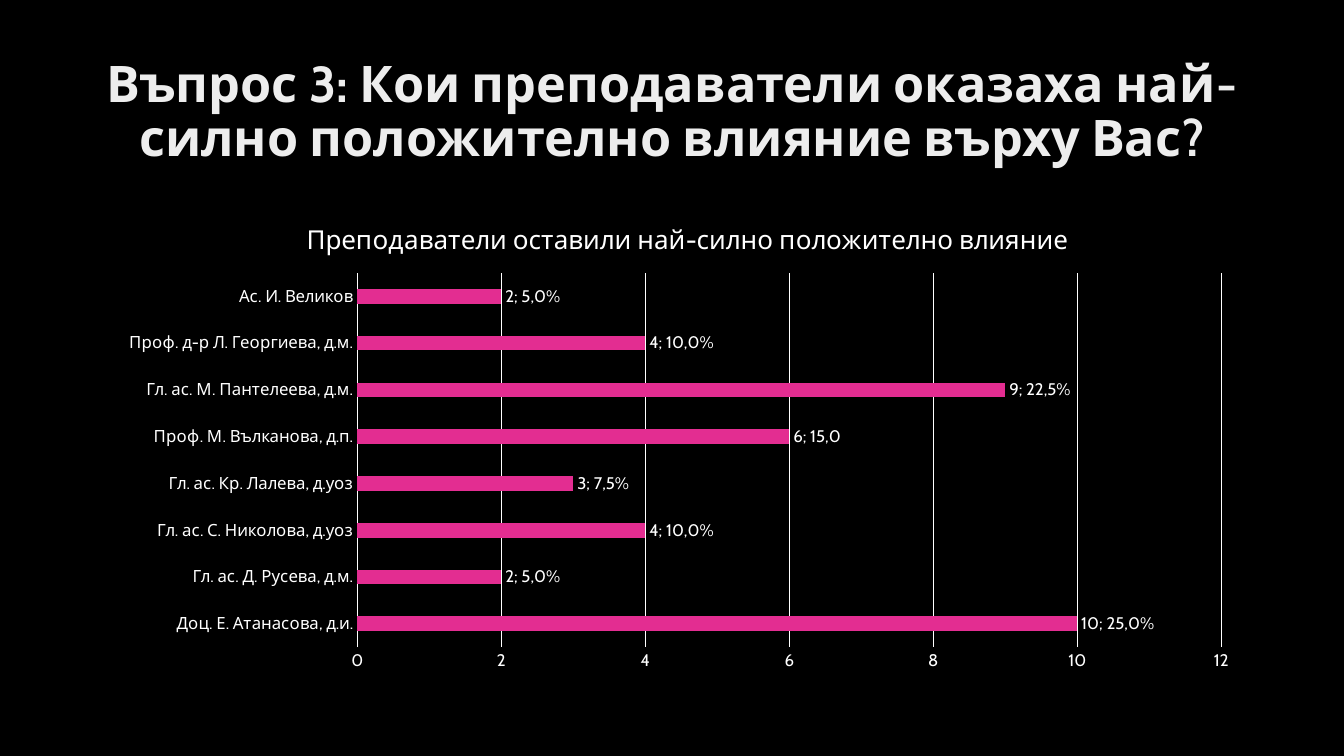
import pptx
import pptx.chart.data
import pptx.dml.color
import pptx.enum.chart
import pptx.enum.text
import pptx.oxml
import pptx.oxml.ns
import pptx.util

Pt = pptx.util.Pt
TEACHERS = [
    ("Доц. Е. Атанасова, д.и.", 10, "10; 25,0%"),
    ("Гл. ас. Д. Русева, д.м.", 2, "2; 5,0%"),
    ("Гл. ас. С. Николова, д.уоз", 4, "4; 10,0%"),
    ("Гл. ас. Кр. Лалева, д.уоз", 3, "3; 7,5%"),
    ("Проф. М. Вълканова, д.п.", 6, "6; 15,0"),
    ("Гл. ас. М. Пантелеева, д.м.", 9, "9; 22,5%"),
    ("Проф. д-р Л. Георгиева, д.м.", 4, "4; 10,0%"),
    ("Ас. И. Великов", 2, "2; 5,0%"),
]


def rgb(value):
    return pptx.dml.color.RGBColor.from_string(value)


def set_plot_layout(chart, **fractions):
    """Place the inner plot area by fractions x, y, w, h of the chart."""
    plot_area = chart._chartSpace.chart.plotArea
    for old in plot_area.findall(pptx.oxml.ns.qn("c:layout")):
        plot_area.remove(old)
    sizes = "".join(f'<c:{k} val="{v}"/>' for k, v in fractions.items())
    plot_area.insert(0, pptx.oxml.parse_xml(
        f'<c:layout {pptx.oxml.ns.nsdecls("c")}><c:manualLayout>'
        '<c:layoutTarget val="inner"/><c:xMode val="edge"/><c:yMode val="edge"/>'
        f'{sizes}</c:manualLayout></c:layout>'))


class Deck:
    FONT = "Cabin"
    BACK, TEXT, HEADING, BAR = "000000", "FFFFFF", "EDEDED", "E32D91"

    def __init__(self, width, height):
        self.prs = pptx.Presentation()
        self.prs.slide_width, self.prs.slide_height = Pt(width), Pt(height)
        self.s = self.prs.slides.add_slide(self.prs.slide_layouts[6])
        fill = self.s.background.fill
        fill.solid()
        fill.fore_color.rgb = rgb(self.BACK)

    def style(self, font, size, color=TEXT, bold=False):
        font.name, font.size, font.bold = self.FONT, Pt(size), bold
        font.color.rgb = rgb(color)

    def heading(self, text, x, y, w, h):
        sp = self.s.shapes.add_textbox(Pt(x), Pt(y), Pt(w), Pt(h))
        tf = sp.text_frame
        tf.word_wrap = True
        tf.vertical_anchor = pptx.enum.text.MSO_ANCHOR.MIDDLE
        tf.text = text
        p = tf.paragraphs[0]
        p.alignment = pptx.enum.text.PP_ALIGN.CENTER
        p.line_spacing = 0.9
        self.style(p.runs[0].font, 36, self.HEADING, bold=True)

    def axis_line(self, line):
        line.color.rgb = rgb(self.TEXT)
        line.width = Pt(0.75)

    def bar_chart(self, title, rows, x, y, w, h):
        names, values, labels = zip(*rows)
        data = pptx.chart.data.CategoryChartData()
        data.categories = names
        data.add_series(title, values)
        chart = self.s.shapes.add_chart(
            pptx.enum.chart.XL_CHART_TYPE.BAR_CLUSTERED,
            Pt(x), Pt(y), Pt(w), Pt(h), data).chart
        self.style(chart.font, 10)
        chart.has_legend = False
        chart.has_title = True
        tf = chart.chart_title.text_frame
        tf.text = title
        self.style(tf.paragraphs[0].runs[0].font, 18.6)
        chart.chart_title.include_in_layout = False
        set_plot_layout(chart, x=0.207, y=0.149, w=0.766, h=0.78)
        self.axes(chart)
        self.bars(chart.plots[0], labels)

    def axes(self, chart):
        for axis in (chart.category_axis, chart.value_axis):
            axis.major_tick_mark = pptx.enum.chart.XL_TICK_MARK.NONE
            axis.minor_tick_mark = pptx.enum.chart.XL_TICK_MARK.NONE
            self.style(axis.tick_labels.font, 12)
        self.axis_line(chart.category_axis.format.line)
        axis = chart.value_axis
        axis.minimum_scale, axis.maximum_scale, axis.major_unit = 0, 12, 2
        axis.format.line.fill.background()
        axis.has_major_gridlines = True
        self.axis_line(axis.major_gridlines.format.line)

    def bars(self, plot, labels):
        plot.gap_width = 219
        plot.vary_by_categories = False
        series = plot.series[0]
        series.format.fill.solid()
        series.format.fill.fore_color.rgb = rgb(self.BAR)
        outside = pptx.enum.chart.XL_LABEL_POSITION.OUTSIDE_END
        series.data_labels.show_value = True
        series.data_labels.position = outside
        self.style(series.data_labels.font, 12)
        for i, text in enumerate(labels):
            label = series.points[i].data_label
            label.text_frame.text = text
            self.style(label.text_frame.paragraphs[0].runs[0].font, 12)
            label.position = outside


def main():
    deck = Deck(960, 540)
    deck.heading("Въпрос 3: Кои преподаватели оказаха най-силно "
                 "положително влияние върху Вас?", 66, 28.8, 828, 104.4)
    deck.bar_chart("Преподаватели оставили най-силно положително влияние",
                   TEACHERS, 88.5, 144, 805.7, 342.7)
    deck.prs.save("out.pptx")


if __name__ == "__main__":
    main()
